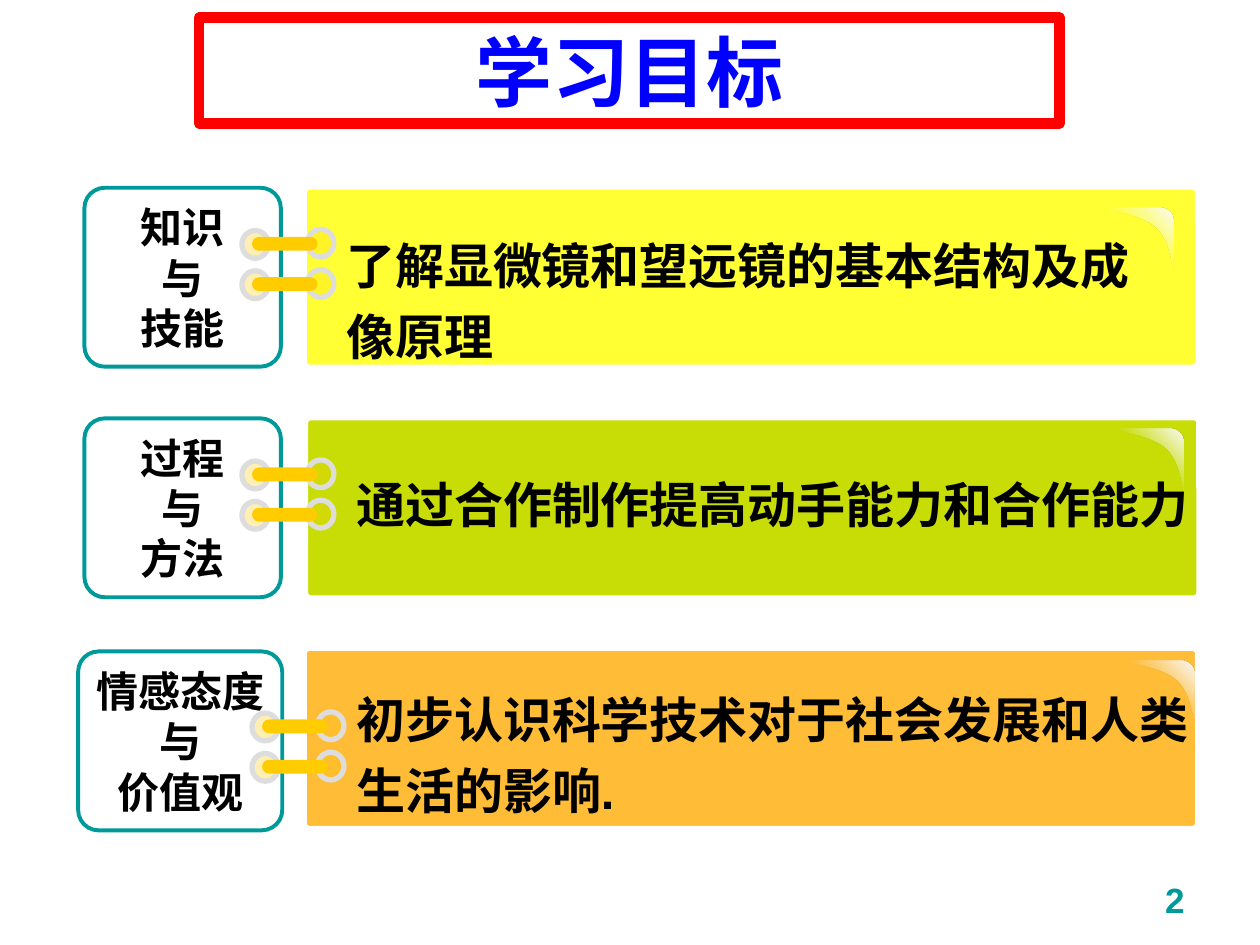
from copy import deepcopy

from lxml import etree
from pptx import Presentation
from pptx.dml.color import RGBColor
from pptx.enum.shapes import MSO_SHAPE
from pptx.enum.text import MSO_ANCHOR, PP_ALIGN
from pptx.oxml.ns import qn
from pptx.util import Inches, Pt

TEAL = "009999"
GOLD = "FFCC00"
ROWS = [
    dict(top=1.49, label=["知识", "与", "技能"], label_box=(0.67, 1.49, 1.56, 1.42),
         panel_left=2.42, color="FFFF33", binder=(1.92, 1.82), gloss=(8.75, 1.65),
         goal="了解显微镜和望远镜的基本结构及成像原理",
         goal_box=(2.65, 1.73, 6.77, 1.7), spacing=1.2, wrap=True),
    dict(top=3.32, label=["过程", "与", "方法"], label_box=(0.67, 3.32, 1.56, 1.42),
         panel_left=2.43, color="C8DD05", binder=(1.92, 3.65), gloss=(8.83, 3.4),
         goal="通过合作制作提高动手能力和合作能力",
         goal_box=(2.73, 3.72, 6.81, 0.6), spacing=1.0, wrap=False),
    dict(top=5.15, label=["情感态度", "与", "价值观"], label_box=(0.62, 5.17, 1.62, 1.42),
         panel_left=2.42, color="FFBC37", binder=(2.0, 5.65), gloss=(8.92, 5.24),
         goal="初步认识科学技术对于社会发展和人类生活的影响.",
         goal_box=(2.73, 5.33, 7.17, 1.22), spacing=1.2, wrap=True),
]


def rgb(color):
    return RGBColor.from_string(color)


def set_alpha(fill_element, percent):
    color = next(fill_element.iter(qn("a:srgbClr")))
    etree.SubElement(color, qn("a:alpha")).set("val", str(percent * 1000))


def write(shape, lines, size, color="000000", font="Arial", align=PP_ALIGN.LEFT,
          anchor=MSO_ANCHOR.TOP, spacing=1.0, wrap=True):
    frame = shape.text_frame
    frame.word_wrap = wrap
    frame.vertical_anchor = anchor
    for index, line in enumerate(lines):
        paragraph = frame.add_paragraph() if index else frame.paragraphs[0]
        paragraph.alignment = align
        paragraph.line_spacing = spacing
        run = paragraph.add_run()
        run.text = line
        run.font.name = font
        run.font.size = Pt(size)
        run.font.bold = True
        run.font.color.rgb = rgb(color)


def add_text(slide, box, lines, size, **style):
    write(slide.shapes.add_textbox(*map(Inches, box)), lines, size, **style)


def add_block(shapes, kind, box, fill, line=None, width=2.25, radius=None, alpha=None):
    block = shapes.add_shape(kind, *map(Inches, box))
    block.shadow.inherit = False
    block.fill.solid()
    block.fill.fore_color.rgb = rgb(fill)
    if alpha is not None:
        set_alpha(block._element.spPr.find(qn("a:solidFill")), alpha)
    if line:
        block.line.color.rgb = rgb(line)
        block.line.width = Pt(width)
    else:
        block.line.fill.background()
    if radius is not None:
        block.adjustments[0] = radius
    return block


def add_binder(slide, left, top):
    """Two pins, each a bar between two rings, that clip a label to its panel."""
    shapes = slide.shapes.add_group_shape().shapes
    for pin_top in (top + 0.32, top):
        for x, y, alpha in ((0.52, 0, 20), (0, 0.01, 30)):
            add_block(shapes, MSO_SHAPE.OVAL, (left + x, pin_top + y, 0.21, 0.22),
                      GOLD, "DDDDDD", 3, alpha=alpha)
        add_block(shapes, MSO_SHAPE.ROUNDED_RECTANGLE,
                  (left + 0.08, pin_top + 0.06, 0.52, 0.11), GOLD, radius=0.5)


def bezier(start, control1, control2, end, steps=12):
    points = []
    for step in range(1, steps + 1):
        t = step / steps
        weights = ((1 - t) ** 3, 3 * t * (1 - t) ** 2, 3 * t ** 2 * (1 - t), t ** 3)
        corners = (start, control1, control2, end)
        points.append(tuple(sum(w * c[axis] for w, c in zip(weights, corners))
                            for axis in (0, 1)))
    return points


def add_gloss(slide, left, top):
    """Curved highlight that fades away from the panel's top right corner."""
    outline = [(0.45, 0)]
    outline += bezier(outline[-1], (0.51, 0), (0.56, 0.05), (0.56, 0.1))
    outline.append((0.56, 0.5))
    outline += bezier(outline[-1], (0.54, 0.51), (0.55, 0.27), (0.41, 0.15))
    outline += bezier(outline[-1], (0.27, 0.04), (0, 0.03), (0.01, 0))
    points = [(Inches(left + x), Inches(top + y)) for x, y in outline]
    builder = slide.shapes.build_freeform(*points[0])
    builder.add_line_segments(points[1:], close=True)
    gloss = builder.convert_to_shape()
    gloss.shadow.inherit = False
    gloss.line.fill.background()
    gloss.fill.gradient()
    gloss.fill.gradient_angle = 45
    for stop in gloss.fill.gradient_stops:
        stop.color.rgb = rgb("FBFBFB")
    stops = gloss._element.spPr.find(qn("a:gradFill")).find(qn("a:gsLst"))
    middle = deepcopy(stops[0])
    middle.set("pos", "50000")
    next(middle.iter(qn("a:srgbClr"))).set("val", "F8F8F8")
    set_alpha(middle, 0)
    stops.insert(1, middle)


def add_title(slide, box):
    banner = add_block(slide.shapes, MSO_SHAPE.RECTANGLE, box, "FFFFFF", "FF0000", 6)
    write(banner, ["学习目标"], 44, color="0000FF", font="Noto Sans CJK JP",
          align=PP_ALIGN.CENTER, anchor=MSO_ANCHOR.MIDDLE)


def add_goal_row(slide, row):
    label = add_block(slide.shapes, MSO_SHAPE.ROUNDED_RECTANGLE, row["label_box"],
                      "FFFFFF", TEAL, radius=0.114)
    write(label, row["label"], 24, align=PP_ALIGN.CENTER,
          anchor=MSO_ANCHOR.MIDDLE, wrap=False)
    add_block(slide.shapes, MSO_SHAPE.ROUNDED_RECTANGLE,
              (row["panel_left"], row["top"], 7.08, 1.42),
              row["color"], "FEFEFE", radius=0.025)
    add_binder(slide, *row["binder"])
    add_text(slide, row["goal_box"], [row["goal"]], 28,
             spacing=row["spacing"], wrap=row["wrap"])
    add_gloss(slide, *row["gloss"])


def main():
    deck = Presentation()
    deck.slide_width, deck.slide_height = Inches(10), Inches(7.5)
    slide = deck.slides.add_slide(deck.slide_layouts[6])
    add_text(slide, (7.17, 6.92, 2.33, 0.52), ["2"], 20, color=TEAL,
             align=PP_ALIGN.RIGHT)
    for row in ROWS:
        add_goal_row(slide, row)
    add_title(slide, (1.58, 0.14, 6.83, 0.84))
    deck.save("out.pptx")


if __name__ == "__main__":
    main()
